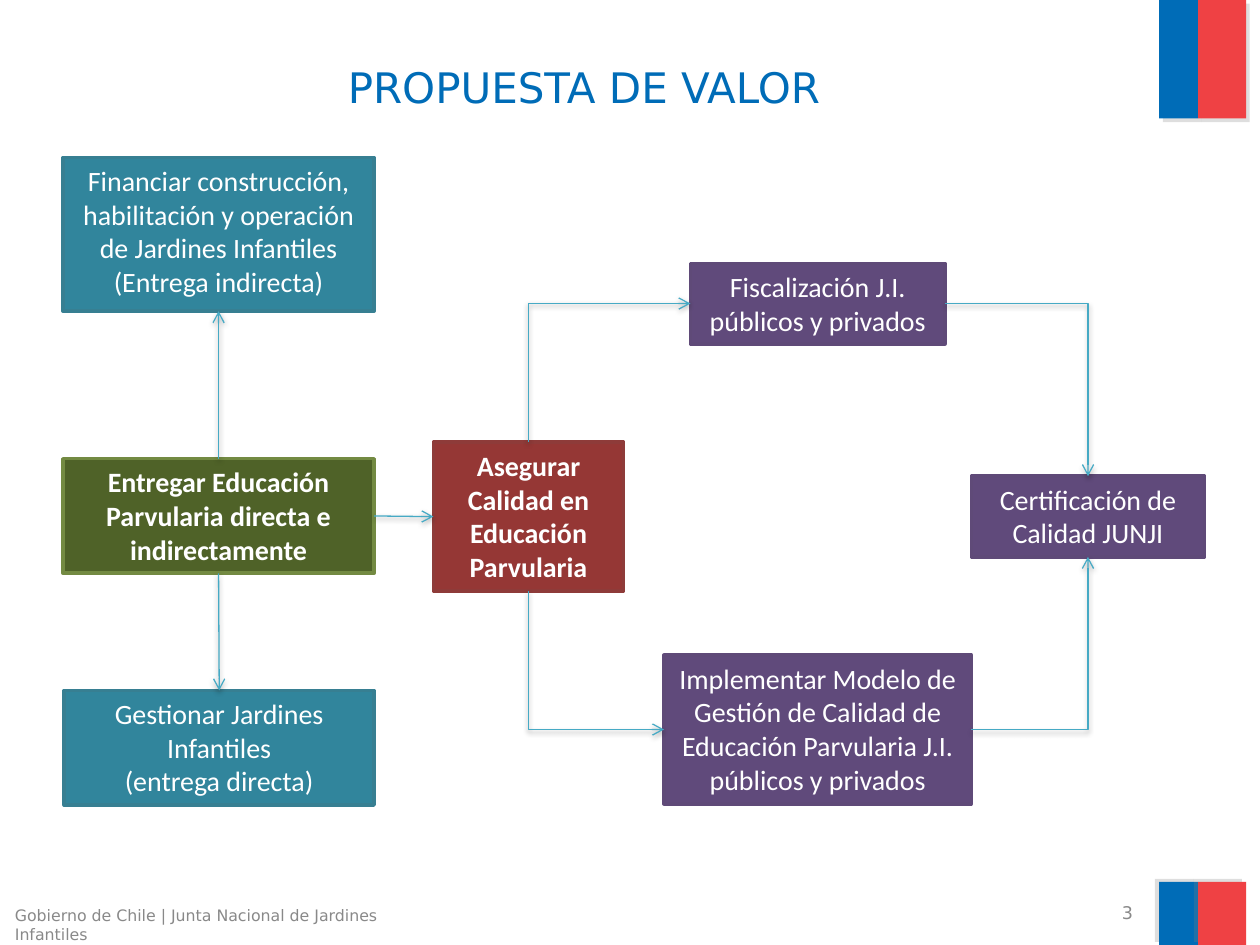
from dataclasses import dataclass

from lxml import etree
from pptx import Presentation
from pptx.dml.color import RGBColor
from pptx.enum.shapes import MSO_CONNECTOR, MSO_SHAPE
from pptx.enum.text import MSO_ANCHOR, PP_ALIGN
from pptx.oxml.ns import qn
from pptx.util import Inches, Pt

RECT = MSO_SHAPE.RECTANGLE
STRAIGHT, ELBOW = MSO_CONNECTOR.STRAIGHT, MSO_CONNECTOR.ELBOW
TOP_ANCHOR, MIDDLE = MSO_ANCHOR.TOP, MSO_ANCHOR.MIDDLE
LEFT_AL, CENTER, RIGHT_AL = PP_ALIGN.LEFT, PP_ALIGN.CENTER, PP_ALIGN.RIGHT
TITLE_ONLY = 5
# Connection sites of a rectangle
TOP, LEFT, BOTTOM, RIGHT = range(4)

# Grid: 100 columns by 75 rows over the whole slide
COLS, ROWS = 100, 75
WIDTH, HEIGHT = Inches(10), Inches(7.5)


@dataclass(frozen=True)
class Theme:
    blue: str = "006CB7"
    red: str = "EF4144"
    grey: str = "898989"
    white: str = "FFFFFF"
    arrow: str = "46AAC5"
    # Box styles: fill and outline
    green: tuple = ("4F6228", "738A42")
    teal: tuple = ("31859C", "377F92")
    maroon: tuple = ("953735", "8E3B39")
    purple: tuple = ("604A7B", "5F4A78")
    heading_font: str = "DejaVu Sans"
    box_font: str = "Calibri"
    title_size: int = 24
    box_size: int = 16
    number_size: int = 10
    footer_size: int = 9


@dataclass(frozen=True)
class Area:
    col: float
    row: float
    cols: float
    rows: float

    def emu(self) -> tuple:
        x, y = WIDTH / COLS, HEIGHT / ROWS
        return tuple(round(v) for v in (self.col * x, self.row * y,
                                        self.cols * x, self.rows * y))


@dataclass(frozen=True)
class Box:
    name: str
    area: Area
    style: tuple
    lines: tuple
    bold: bool = False


@dataclass(frozen=True)
class Arrow:
    start: str
    start_side: int
    end: str
    end_side: int


@dataclass(frozen=True)
class Shadow:
    color: str
    alpha: int
    blur: float
    dist: float
    angle: int


T = Theme()
ARROW_SHADOW = Shadow("000000", 38, 3.1, 1.6, 90)

FLAG_BARS = [
    (Area(col, row, cols, rows), color, Shadow("808080", 25, 0, 3, angle))
    for row, rows, angle in ((0, 9.4, 45), (70, 5, 215))
    for col, cols, color in ((92, 3.1, T.blue), (95.1, 3.8, T.red))
]

BOXES = [
    Box("deliver", Area(5, 36.4, 24.7, 9.1), T.green,
        ("Entregar Educación Parvularia directa e indirectamente",), True),
    Box("inspect", Area(54.8, 20.9, 20.2, 6.4), T.purple,
        ("Fiscalización J.I. públicos y privados",)),
    Box("model", Area(52.7, 52, 24.4, 11.8), T.purple,
        ("Implementar Modelo de Gestión de Calidad de "
         "Educación Parvularia J.I. públicos y privados",)),
    Box("assure", Area(34.4, 35.1, 15.1, 11.8), T.maroon,
        ("Asegurar Calidad en Educación Parvularia",), True),
    Box("manage", Area(5.1, 54.8, 24.6, 9.1), T.teal,
        ("Gestionar Jardines Infantiles", "(entrega directa)")),
    Box("finance", Area(5, 12.5, 24.7, 12.2), T.teal,
        ("Financiar construcción, habilitación y operación "
         "de Jardines Infantiles", "(Entrega indirecta)")),
    Box("certify", Area(77.1, 37.8, 18.5, 6.4), T.purple,
        ("Certificación de Calidad JUNJI",)),
]

ARROWS = [
    Arrow("deliver", TOP, "finance", BOTTOM),
    Arrow("deliver", BOTTOM, "manage", TOP),
    Arrow("assure", TOP, "inspect", LEFT),
    Arrow("deliver", RIGHT, "assure", LEFT),
    Arrow("assure", BOTTOM, "model", LEFT),
    Arrow("model", RIGHT, "certify", BOTTOM),
    Arrow("inspect", RIGHT, "certify", TOP),
]


def rgb(color: str) -> RGBColor:
    return RGBColor.from_string(color)


def place(sp, area: Area) -> None:
    sp.left, sp.top, sp.width, sp.height = area.emu()


def write(sp, lines: tuple, font: str, size: int, color: str,
          align, anchor=TOP_ANCHOR, bold: bool = False) -> None:
    tf = sp.text_frame
    tf.word_wrap, tf.vertical_anchor = True, anchor
    for i, line in enumerate(lines):
        p = tf.paragraphs[0] if i == 0 else tf.add_paragraph()
        p.alignment = align
        r = p.add_run()
        r.text = line
        for key, value in {"name": font, "size": Pt(size), "bold": bold}.items():
            setattr(r.font, key, value)
        r.font.color.rgb = rgb(color)


def cast_shadow(sp, shadow: Shadow) -> None:
    effects = etree.SubElement(sp._element.spPr, qn("a:effectLst"))
    outer = etree.SubElement(effects, qn("a:outerShdw"), {
        "blurRad": str(Pt(shadow.blur)), "dist": str(Pt(shadow.dist)),
        "dir": str(shadow.angle * 60000), "algn": "ctr", "rotWithShape": "0"})
    color = etree.SubElement(outer, qn("a:srgbClr"), val=shadow.color)
    etree.SubElement(color, qn("a:alpha"), val=str(shadow.alpha * 1000))


def add_rect(s, area: Area, color: str):
    sp = s.shapes.add_shape(RECT, *area.emu())
    sp.fill.solid()
    sp.fill.fore_color.rgb = rgb(color)
    sp.line.fill.background()
    return sp


def add_box(s, box: Box):
    fill, outline = box.style
    sp = add_rect(s, box.area, fill)
    sp.shadow.inherit = False
    sp.line.color.rgb, sp.line.width = rgb(outline), Pt(2)
    write(sp, box.lines, T.box_font, T.box_size, T.white, CENTER, bold=box.bold)
    return sp


def turn_vertical_first(cx) -> None:
    """Rotate a one-corner elbow so that it leaves its box vertically."""
    dx, dy = cx.end_x - cx.begin_x, cx.end_y - cx.begin_y
    mid_x, mid_y = (cx.begin_x + cx.end_x) // 2, (cx.begin_y + cx.end_y) // 2
    cx.width, cx.height = abs(dy), abs(dx)
    cx.left, cx.top = mid_x - abs(dy) // 2, mid_y - abs(dx) // 2
    xfrm = cx._element.spPr.find(qn("a:xfrm"))
    for key, value in {"rot": 90 * 60000, "flipH": int(dy < 0),
                       "flipV": int(dx > 0)}.items():
        xfrm.set(key, str(value))


def add_arrow(s, arrow: Arrow, shapes: dict) -> None:
    bent = arrow.start_side % 2 != arrow.end_side % 2
    cx = s.shapes.add_connector(ELBOW if bent else STRAIGHT, 0, 0, 0, 0)
    cx.begin_connect(shapes[arrow.start], arrow.start_side)
    cx.end_connect(shapes[arrow.end], arrow.end_side)
    if bent:
        cx._element.spPr.find(qn("a:prstGeom")).set("prst", "bentConnector2")
        if arrow.start_side in (TOP, BOTTOM):
            turn_vertical_first(cx)
    cx.line.color.rgb, cx.line.width = rgb(T.arrow), Pt(0.75)
    etree.SubElement(cx.line._get_or_add_ln(), qn("a:tailEnd"), type="arrow")
    cast_shadow(cx, ARROW_SHADOW)


def main() -> None:
    prs = Presentation()
    prs.slide_width, prs.slide_height = WIDTH, HEIGHT
    s = prs.slides.add_slide(prs.slide_layouts[TITLE_ONLY])

    # Flag bars in the right-hand corners
    for area, color, shadow in FLAG_BARS:
        cast_shadow(add_rect(s, area, color), shadow)

    # Title, footer and slide number
    place(s.shapes.title, Area(1.7, 4.4, 89.3, 5.5))
    write(s.shapes.title, ("PROPUESTA DE VALOR",), T.heading_font,
          T.title_size, T.blue, CENTER)
    footer = s.shapes.add_textbox(*Area(0.2, 71.4, 31.7, 2.7).emu())
    write(footer, ("Gobierno de Chile | Junta Nacional de Jardines Infantiles",),
          T.heading_font, T.footer_size, T.grey, LEFT_AL)
    number = s.shapes.add_textbox(*Area(67.6, 71.4, 23.3, 2.1).emu())
    write(number, ("3",), T.heading_font, T.number_size, T.grey, RIGHT_AL, MIDDLE)

    # Flow diagram
    shapes = {box.name: add_box(s, box) for box in BOXES}
    for arrow in ARROWS:
        add_arrow(s, arrow, shapes)

    prs.save("out.pptx")


if __name__ == "__main__":
    main()
